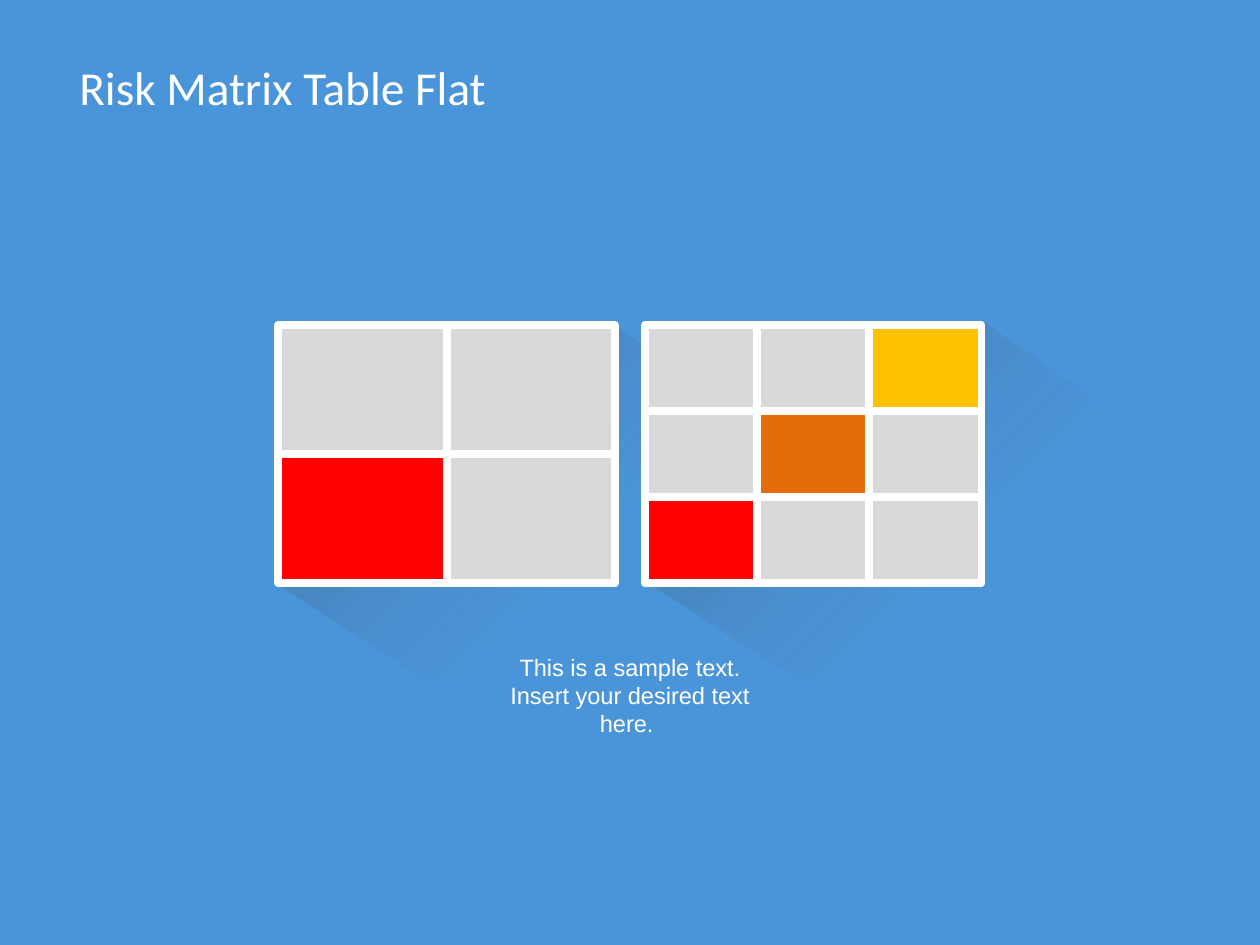
from dataclasses import dataclass

from lxml import etree
from pptx import Presentation
from pptx.dml.color import RGBColor
from pptx.enum import shapes, text
from pptx.oxml import ns, parse_xml
from pptx.util import Inches, Pt

BLUE = RGBColor(0x4A, 0x95, 0xDA)
WHITE = RGBColor(0xFF, 0xFF, 0xFF)
GREY = RGBColor(0xD9, 0xD9, 0xD9)
RED = RGBColor(0xFF, 0x00, 0x00)
ORANGE = RGBColor(0xE4, 0x6C, 0x0A)
AMBER = RGBColor(0xFF, 0xC0, 0x00)

TOP, WIDTH, HEIGHT = 2.58, 2.67, 2.05
BORDER = Pt(4.5)
SHADOW_OUTLINE = [(0, 2.06), (1.47, 3.02), (4.41, 3.01), (4.37, 1.19),
                  (2.66, 0), (2.64, 2.08)]
SHADOW_FILL = (
    f'<a:gradFill {ns.nsdecls("a")} rotWithShape="1"><a:gsLst>'
    '<a:gs pos="0"><a:srgbClr val="000000"><a:alpha val="30000"/></a:srgbClr></a:gs>'
    '<a:gs pos="59000"><a:srgbClr val="6B6B6B"><a:alpha val="0"/></a:srgbClr></a:gs>'
    '</a:gsLst><a:lin ang="2700000" scaled="0"/></a:gradFill>'
)


@dataclass
class Matrix:
    left: float
    shadow_left: float
    size: int
    diagonal: list[RGBColor]


MATRICES = [
    Matrix(2.21, 2.19, 2, [RED]),
    Matrix(5.12, 5.15, 3, [RED, ORANGE, AMBER]),
]


def add_shadow(s, left: float) -> None:
    points = [(Inches(left + x), Inches(TOP - 0.02 + y)) for x, y in SHADOW_OUTLINE]
    builder = s.shapes.build_freeform(*points[0])
    builder.add_line_segments(points[1:], close=True)
    sp = builder.convert_to_shape()
    sp.shadow.inherit = False
    sp.line.fill.background()
    sp.fill.background()
    no_fill = sp._element.spPr.find(ns.qn("a:noFill"))
    sp._element.spPr.replace(no_fill, parse_xml(SHADOW_FILL))


def add_rect(s, left: float, top: float, width: float, height: float,
             fill: RGBColor | None = None) -> None:
    sp = s.shapes.add_shape(shapes.MSO_SHAPE.RECTANGLE, Inches(left), Inches(top),
                            Inches(width), Inches(height))
    sp.shadow.inherit = False
    if fill is None:
        sp.fill.background()
        sp.line.color.rgb = WHITE
        sp.line.width = BORDER
    else:
        sp.fill.solid()
        sp.fill.fore_color.rgb = fill
        sp.line.fill.background()


def add_line(s, x1: float, y1: float, x2: float, y2: float) -> None:
    line = s.shapes.add_connector(shapes.MSO_CONNECTOR.STRAIGHT, Inches(x1),
                                  Inches(y1), Inches(x2), Inches(y2))
    line.line.color.rgb = WHITE
    line.line.width = BORDER
    etree.SubElement(line._element.spPr, ns.qn("a:effectLst"))


def add_matrix(s, m: Matrix) -> None:
    add_shadow(s, m.shadow_left)
    add_rect(s, m.left, TOP, WIDTH, HEIGHT, GREY)
    cell_w, cell_h = WIDTH / m.size, HEIGHT / m.size
    for i, color in enumerate(m.diagonal):
        add_rect(s, m.left + i * cell_w, TOP + (m.size - 1 - i) * cell_h,
                 cell_w, cell_h, color)
    add_rect(s, m.left, TOP, WIDTH, HEIGHT)
    for i in range(1, m.size):
        x, y = m.left + i * cell_w, TOP + i * cell_h
        add_line(s, m.left, y, m.left + WIDTH, y)
        add_line(s, x, TOP, x, TOP + HEIGHT)


def add_title(s) -> None:
    title = s.shapes.title
    title.left, title.top = Inches(0.5), Inches(0.3)
    title.width, title.height = Inches(9), Inches(0.78)
    tf = title.text_frame
    tf.text = "Risk Matrix Table Flat"
    tf.vertical_anchor = text.MSO_ANCHOR.MIDDLE
    tf.margin_left = tf.margin_right = Inches(0.13)
    tf.margin_top = tf.margin_bottom = Inches(0.07)
    format_text(tf.paragraphs[0], "Calibri", 27, text.PP_ALIGN.LEFT)


def add_caption(s) -> None:
    box = s.shapes.add_textbox(Inches(3.78), Inches(5.13), Inches(2.44), Inches(0.78))
    tf = box.text_frame
    tf.word_wrap = True
    tf.auto_size = text.MSO_AUTO_SIZE.SHAPE_TO_FIT_TEXT
    tf.text = "This is a sample text. Insert your desired text here. "
    format_text(tf.paragraphs[0], "Arial", 13.5, text.PP_ALIGN.CENTER)


def format_text(p, name: str, size: float, align: text.PP_ALIGN) -> None:
    p.alignment = align
    p.font.name = name
    p.font.size = Pt(size)
    p.font.color.rgb = WHITE


def main() -> None:
    prs = Presentation()
    prs.slide_width, prs.slide_height = Inches(10), Inches(7.5)
    s = prs.slides.add_slide(prs.slide_layouts[5])
    s.background.fill.solid()
    s.background.fill.fore_color.rgb = BLUE
    add_title(s)
    for m in MATRICES:
        add_matrix(s, m)
    add_caption(s)
    prs.save("out.pptx")


if __name__ == "__main__":
    main()
